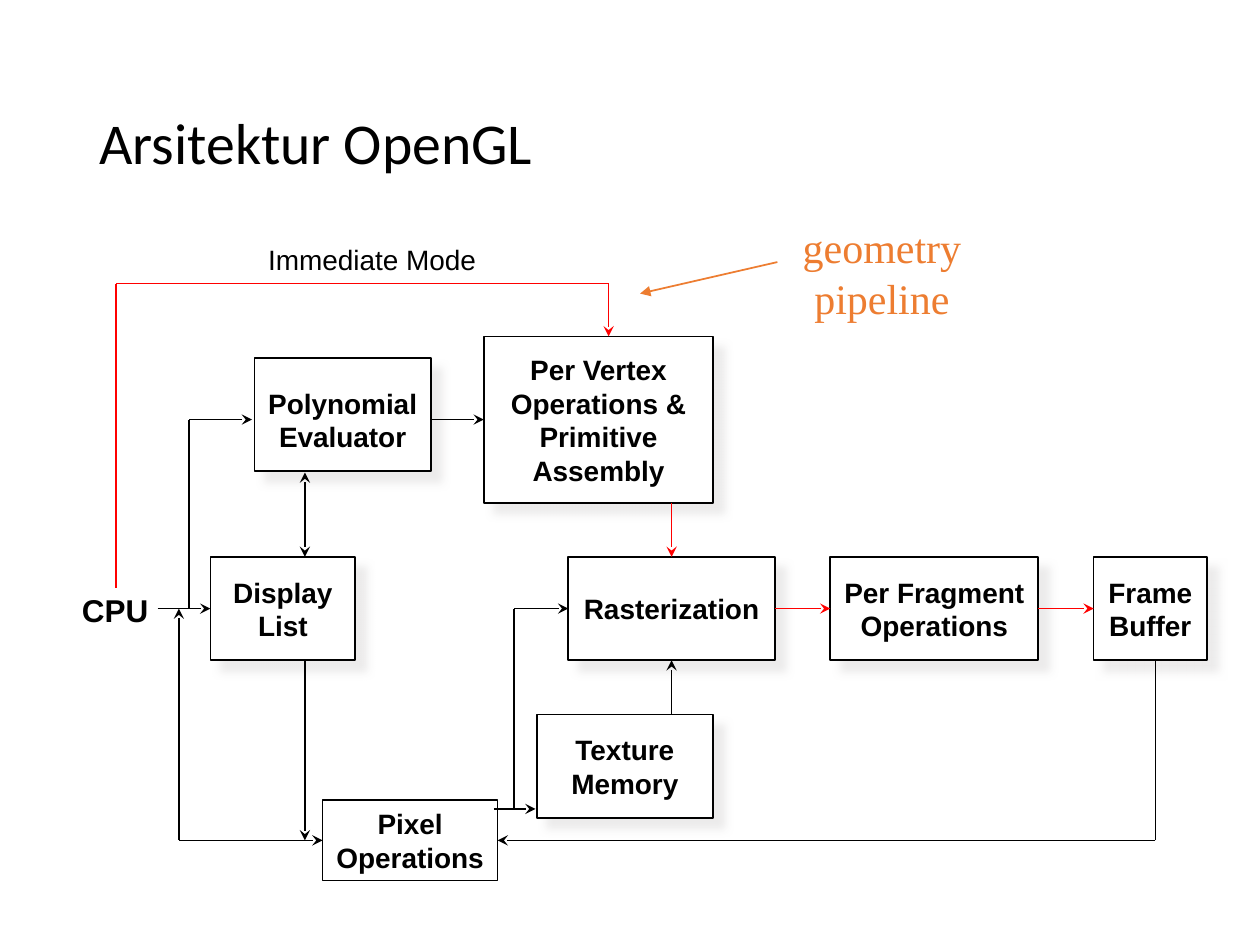
from lxml import etree
from pptx import Presentation
from pptx import util as u
from pptx.dml.color import RGBColor
from pptx.enum import shapes, text
from pptx.oxml.ns import qn

BLACK, WHITE, RED, ORANGE, SHADOW = "000000", "FFFFFF", "FF0000", "ED7D31", "E7E6E6"
TOP, LEFT, BOTTOM, RIGHT = range(4)


def color(hex_value):
    return RGBColor.from_string(hex_value)


class Diagram:
    font = "Arial"
    size = 16
    line_width = 1

    def __init__(self, slide):
        self.slide = slide

    def set_words(self, frame, words, size=None, font=None, ink=BLACK, bold=False,
                  align=text.PP_ALIGN.CENTER, anchor=text.MSO_ANCHOR.MIDDLE, wrap=False):
        frame.word_wrap = wrap
        frame.vertical_anchor = anchor
        frame.text = words
        for paragraph in frame.paragraphs:
            paragraph.alignment = align
            paragraph.font.name = font or self.font
            paragraph.font.size = u.Pt(size or self.size)
            paragraph.font.bold = bold
            paragraph.font.color.rgb = color(ink)

    def label(self, bounds, words, **style):
        box = self.slide.shapes.add_textbox(*map(u.Inches, bounds))
        self.set_words(box.text_frame, words, **style)

    def stage(self, bounds, words, raised=True, drop=0):
        """Add a pipeline box; raised gives fill and shadow, drop lowers its text."""
        box = self.slide.shapes.add_shape(
            shapes.MSO_SHAPE.RECTANGLE, *map(u.Inches, bounds))
        box.line.color.rgb = color(BLACK)
        box.line.width = u.Pt(self.line_width if raised else 0.75)
        box.shadow.inherit = False
        if raised:
            box.fill.solid()
            box.fill.fore_color.rgb = color(WHITE)
            self.cast_shadow(box)
        else:
            box.fill.background()
        self.set_words(box.text_frame, words, bold=True)
        box.text_frame.margin_top = u.Inches(0.05 + 2 * drop)
        return box

    def cast_shadow(self, box):
        effects = box._element.spPr.find(qn("a:effectLst"))
        outer = etree.SubElement(
            effects, qn("a:outerShdw"), blurRad=str(u.Pt(5)), dist=str(u.Pt(8.5)),
            dir=str(45 * 60000), algn="ctr", rotWithShape="0")
        tint = etree.SubElement(outer, qn("a:srgbClr"), val=SHADOW)
        etree.SubElement(tint, qn("a:alpha"), val="75000")

    def line(self, start, end, ink=BLACK, head=None, tail=None, begin=None, finish=None):
        """Draw a line; begin and finish are (box, side) pairs to join."""
        link = self.slide.shapes.add_connector(
            shapes.MSO_CONNECTOR.STRAIGHT, *map(u.Inches, (*start, *end)))
        link.line.color.rgb = color(ink)
        link.line.width = u.Pt(self.line_width)
        properties = link._element.spPr
        outline = properties.find(qn("a:ln"))
        for tag, kind in (("a:headEnd", head), ("a:tailEnd", tail)):
            if kind:
                etree.SubElement(outline, qn(tag), type=kind)
        etree.SubElement(properties, qn("a:effectLst"))
        if begin:
            link.begin_connect(*begin)
        if finish:
            link.end_connect(*finish)

    def arrow(self, start, end, ink=BLACK, **joins):
        self.line(start, end, ink, tail="stealth", **joins)


def main():
    deck = Presentation()
    deck.slide_width, deck.slide_height = u.Inches(10), u.Inches(7.5)
    d = Diagram(deck.slides.add_slide(deck.slide_layouts[6]))

    d.label((0.69, 0.4, 8.62, 1.45), "Arsitektur OpenGL", size=33, font="Calibri",
            align=text.PP_ALIGN.LEFT, wrap=True)
    d.label((2.03, 1.88, 3.02, 0.37), "Immediate Mode", align=text.PP_ALIGN.LEFT,
            anchor=text.MSO_ANCHOR.TOP, wrap=True)
    d.label((6.27, 1.71, 1.46, 0.9), "geometry\npipeline", size=24,
            font="Times New Roman", ink=ORANGE)
    d.label((0.55, 4.64, 0.73, 0.4), "CPU", size=18, bold=True)

    row_top, row_height = 4.42, 0.82
    row = row_top + row_height / 2
    row_bottom = row_top + row_height
    display = d.stage((1.67, row_top, 1.15, row_height), "Display\vList")
    raster = d.stage((4.51, row_top, 1.64, row_height), "Rasterization")
    fragment = d.stage((6.59, row_top, 1.65, row_height), "Per Fragment\nOperations")
    frame_buffer = d.stage((8.68, row_top, 0.9, row_height), "Frame\nBuffer")
    d.stage((4.26, 5.67, 1.4, row_height), "Texture\nMemory")
    vertex = d.stage((3.84, 2.67, 1.82, 1.32),
                     "Per Vertex\nOperations &\nPrimitive\nAssembly")
    d.stage((2.02, 2.84, 1.4, 0.9), "Polynomial\nEvaluator", drop=0.04)
    pixel = d.stage((2.56, 6.35, 1.39, 0.64), "Pixel\nOperations", raised=False)

    # Immediate mode and the geometry pipeline
    d.line((0.92, 2.25), (0.92, 4.67), RED)
    d.line((4.83, 2.25), (0.92, 2.25), RED)
    d.arrow((4.83, 2.25), (4.83, 2.67), RED)
    d.arrow((5.33, 3.99), (5.33, row_top), RED, finish=(raster, TOP))
    d.arrow((6.15, row), (6.59, row), RED, begin=(raster, RIGHT), finish=(fragment, LEFT))
    d.arrow((8.24, row), (8.68, row), RED,
            begin=(fragment, RIGHT), finish=(frame_buffer, LEFT))
    d.line((6.17, 2.08), (5.08, 2.33), ORANGE, tail="triangle")

    # CPU to display list and evaluator
    evaluator_row = 3.33
    d.arrow((1.25, row), (1.67, row), finish=(display, LEFT))
    d.line((1.5, row), (1.5, evaluator_row))
    d.arrow((1.5, evaluator_row), (2, evaluator_row))
    d.arrow((3.42, evaluator_row), (3.84, evaluator_row), finish=(vertex, LEFT))
    d.line((2.42, 3.75), (2.42, row_top), head="stealth", tail="stealth")

    # Pixel path
    pixel_row = 6.67
    d.line((1.42, row), (1.42, pixel_row), head="stealth")
    d.arrow((1.42, pixel_row), (2.56, pixel_row), finish=(pixel, LEFT))
    d.arrow((2.42, row_bottom), (2.42, pixel_row))
    d.line((9.17, row_bottom), (9.17, pixel_row))
    d.arrow((9.17, pixel_row), (3.95, pixel_row), finish=(pixel, RIGHT))

    # Texture memory and rasterization
    d.arrow((3.92, 6.42), (4.25, 6.42))
    d.line((4.08, 6.42), (4.08, row))
    d.arrow((4.08, row), (4.51, row), finish=(raster, LEFT))
    d.arrow((5.33, 5.67), (5.33, row_bottom), finish=(raster, BOTTOM))

    deck.save("out.pptx")


if __name__ == "__main__":
    main()
